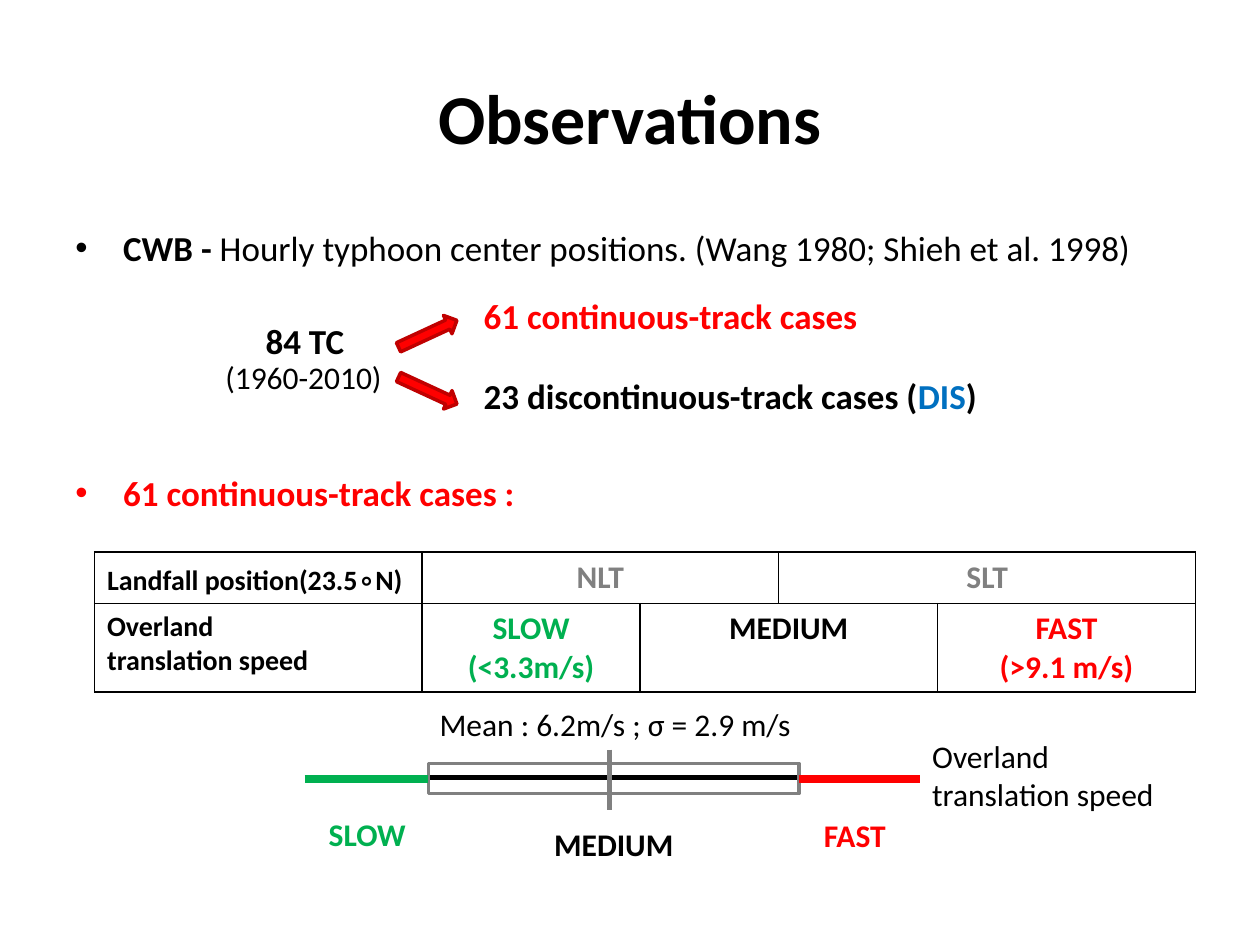
from lxml.etree import SubElement
from pptx import Presentation
from pptx.dml.color import RGBColor
from pptx.enum.shapes import MSO_CONNECTOR, MSO_SHAPE
from pptx.enum.text import MSO_ANCHOR, PP_ALIGN
from pptx.oxml.ns import qn
from pptx.util import Inches, Pt

BLACK = RGBColor(0x00, 0x00, 0x00)
RED = RGBColor(0xFF, 0x00, 0x00)
DARK = RGBColor(0xC0, 0x00, 0x00)
BLUE = RGBColor(0x00, 0x70, 0xC0)
GREEN = RGBColor(0x00, 0xB0, 0x50)
GRAY = RGBColor(0x80, 0x80, 0x80)


def write(par, text, color=BLACK, **style):
    """Add a run to a paragraph and format it."""
    run = par.add_run()
    run.text = text
    font = {"name": "Calibri", "size": Pt(18), "bold": False} | style
    for key, value in font.items():
        setattr(run.font, key, value)
    run.font.color.rgb = color


def fill_lines(frame, lines, align=PP_ALIGN.LEFT, **style):
    """Write each line as a paragraph of the frame."""
    for i, line in enumerate(lines):
        par = frame.add_paragraph() if i else frame.paragraphs[0]
        par.alignment = align
        write(par, line, **style)


def label(slide, box, *lines, **style):
    """Add an unwrapped text box and return its frame."""
    frame = slide.shapes.add_textbox(*map(Inches, box)).text_frame
    frame.word_wrap = False
    fill_lines(frame, lines, **style)
    return frame


def rule(slide, start, end, color, width):
    """Draw a straight line without a shadow."""
    line = slide.shapes.add_connector(
        MSO_CONNECTOR.STRAIGHT, *map(Inches, start + end))
    line.line.color.rgb = color
    line.line.width = Pt(width)
    SubElement(line._element.spPr, qn("a:effectLst"))


def add_title(slide, box):
    """Place and format the title placeholder."""
    title = slide.shapes.title
    for key, value in zip(("left", "top", "width", "height"), box):
        setattr(title, key, Inches(value))
    title.text_frame.vertical_anchor = MSO_ANCHOR.MIDDLE
    fill_lines(title.text_frame, ["Observations"], PP_ALIGN.CENTER,
               size=Pt(40), bold=True)


def add_points(slide, box):
    """Add the two bulleted statements."""
    frame = slide.shapes.add_textbox(*map(Inches, box)).text_frame
    frame.word_wrap = True
    points = [
        [("CWB -", BLACK, True),
         (" Hourly typhoon center positions. (Wang 1980; Shieh et al. 1998)",
          BLACK, False)],
        [("61 continuous-track cases :", RED, True)],
    ]
    for i, point in enumerate(points):
        par = frame.add_paragraph() if i else frame.paragraphs[0]
        par.space_before = Pt(115.6 * i)
        props = par._p.get_or_add_pPr()
        props.set("marL", str(Inches(0.38)))
        props.set("indent", str(Inches(-0.38)))
        SubElement(props, qn("a:buFont"), typeface="Arial")
        SubElement(props, qn("a:buChar"), char="•")
        for text, color, bold in point:
            write(par, text, color, size=Pt(20), bold=bold)


def add_split(slide, box):
    """Show how the cases split into two track types."""
    left, top, width, height = box
    big = {"size": Pt(20), "bold": True}
    label(slide, (left + 0.32, top + 0.2, 0.83, 0.44), "84 TC", **big)
    label(slide, (left, top + 0.5, 1.46, 0.4), "(1960-2010)")
    for drop, angle in ((0.28, -24.8), (0.73, 24.8)):
        arrow = slide.shapes.add_shape(
            MSO_SHAPE.RIGHT_ARROW, Inches(left + 1.45), Inches(top + drop),
            Inches(0.51), Inches(0.16))
        arrow.rotation = angle
        arrow.shadow.inherit = False
        arrow.fill.solid()
        arrow.fill.fore_color.rgb = RED
        arrow.line.color.rgb = DARK
        arrow.line.width = Pt(2)
    side = left + 2.05
    label(slide, (side, top, 3.19, 0.44), "61 continuous-track cases",
          color=RED, **big)
    frame = label(slide, (side, top + height - 0.44, width - 2.05, 0.44),
                  "23 discontinuous-track cases (", **big)
    write(frame.paragraphs[0], "DIS", BLUE, **big)
    write(frame.paragraphs[0], ")", **big)


def add_border(cell):
    """Give a cell thin black edges and no fill."""
    props = cell._tc.get_or_add_tcPr()
    for side in ("lnL", "lnR", "lnT", "lnB"):
        edge = SubElement(props, qn(f"a:{side}"), w=str(Pt(1)))
        paint = SubElement(edge, qn("a:solidFill"))
        SubElement(paint, qn("a:srgbClr"), val=str(BLACK))
    cell.fill.background()


def add_classes(slide, box):
    """Add the table of landfall and speed classes."""
    table = slide.shapes.add_table(2, 5, *map(Inches, box)).table
    table.first_row = table.horz_banding = False
    for col, width in zip(table.columns, (2.6, 1.73, 1.1, 1.26, 2.05)):
        col.width = Inches(width)
    for row, height in zip(table.rows, (0.41, box[3] - 0.41)):
        row.height = Inches(height)
    for cell in table.iter_cells():
        add_border(cell)
    for row, col in ((0, 1), (0, 3), (1, 2)):
        table.cell(row, col).merge(table.cell(row, col + 1))
    small = {"size": Pt(16), "bold": True}
    par = table.cell(0, 0).text_frame.paragraphs[0]
    write(par, "Landfall position(23.5", **small)
    write(par, "∘", name="Noto Sans CJK TC", **small)
    write(par, "N)", **small)
    fill_lines(table.cell(1, 0).text_frame,
               ["Overland", "translation speed"], **small)
    classes = [
        (0, 1, GRAY, ["NLT"]),
        (0, 3, GRAY, ["SLT"]),
        (1, 1, GREEN, ["SLOW", "(<3.3m/s)"]),
        (1, 2, BLACK, ["MEDIUM"]),
        (1, 4, RED, ["FAST", "(>9.1 m/s)"]),
    ]
    for row, col, color, lines in classes:
        fill_lines(table.cell(row, col).text_frame, lines, PP_ALIGN.CENTER,
                   color=color, bold=True)


def add_scale(slide, box):
    """Draw the speed scale with its mean and spread."""
    left, top, width, height = box
    right, mid = left + 4.88, top + 0.63
    low, high = left + 0.98, right - 0.96
    rule(slide, (left, mid - 0.01), (right, mid - 0.01), BLACK, 3)
    rule(slide, (4.84, mid - 0.23), (4.84, mid + 0.25), GRAY, 3)
    spread = slide.shapes.add_shape(
        MSO_SHAPE.RECTANGLE, Inches(low), Inches(mid - 0.12),
        Inches(high - low), Inches(0.24))
    spread.shadow.inherit = False
    spread.fill.background()
    spread.line.color.rgb = GRAY
    spread.line.width = Pt(2)
    rule(slide, (left, mid), (low, mid), GREEN, 4.5)
    rule(slide, (high, mid), (right, mid), RED, 4.5)
    label(slide, (right, top + 0.25, left + width - right, 0.71),
          "Overland", "translation speed")
    label(slide, (low - 0.01, top, 3.03, 0.4), "Mean : 6.2m/s ; σ = 2.9 m/s")
    base = top + height - 0.4
    for x, y, wide, name, color in (
            (0.09, -0.08, 0.82, "SLOW", GREEN),
            (1.88, 0, 1.16, "MEDIUM", BLACK),
            (4.02, -0.07, 0.7, "FAST", RED)):
        label(slide, (left + x, base + y, wide, 0.4), name,
              color=color, bold=True)


def main():
    """Build and save the slide."""
    deck = Presentation()
    deck.slide_width, deck.slide_height = Inches(10), Inches(7.5)
    slide = deck.slides.add_slide(deck.slide_layouts[5])
    add_title(slide, (0.5, 0.3, 9, 1.25))
    add_points(slide, (0.5, 1.75, 9, 4.95))
    add_split(slide, (1.69, 2.29, 6.2, 1.07))
    add_classes(slide, (0.75, 4.38, 8.74, 1.11))
    add_scale(slide, (2.42, 5.55, 6.86, 1.35))
    deck.save("out.pptx")


if __name__ == "__main__":
    main()
